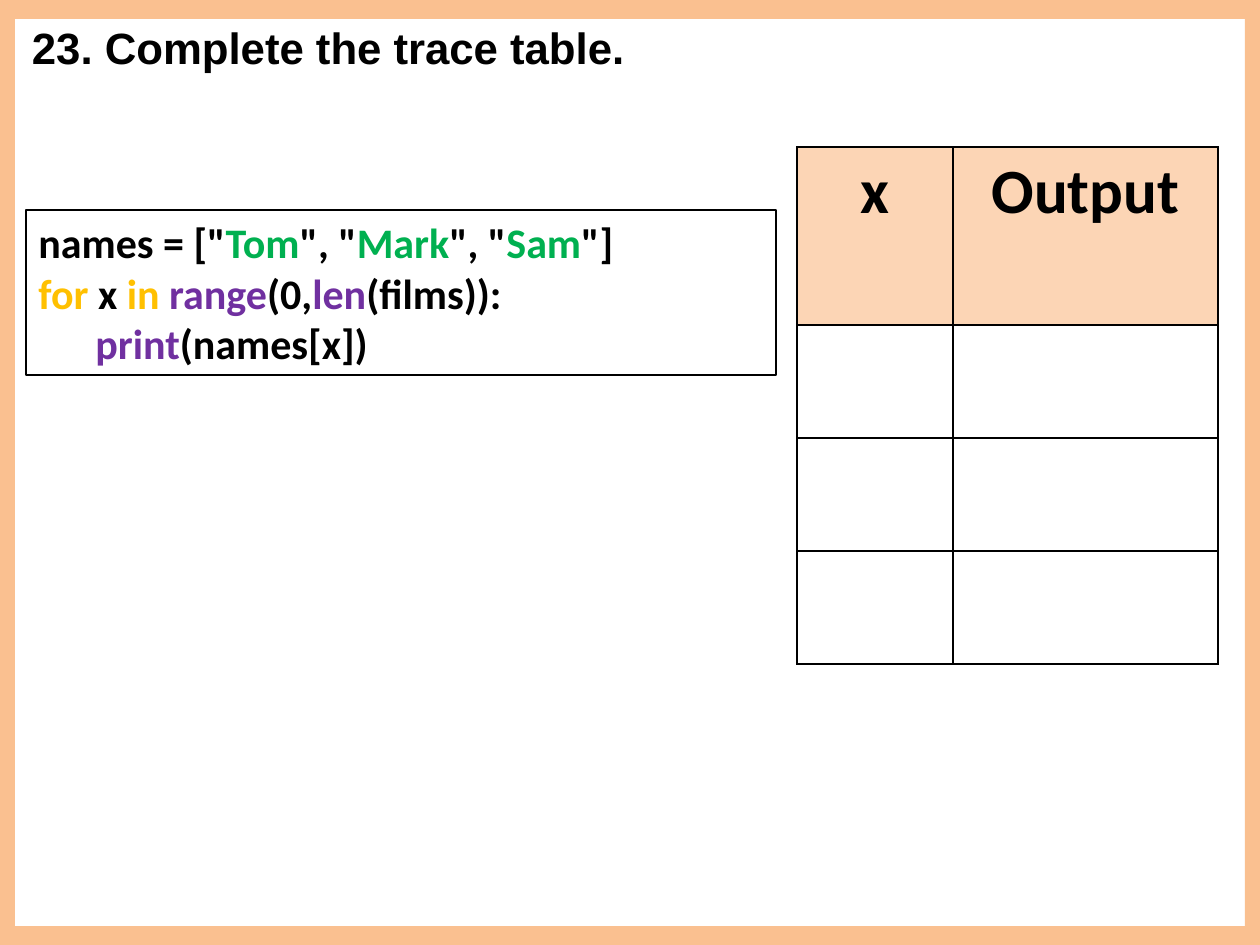
import pptx
import pptx.util
import pptx.dml.color
import pptx.enum.shapes
import pptx.enum.text
import lxml.etree

SCALE = 914400 // 126
NS = "http://schemas.openxmlformats.org/drawingml/2006/main"
SHAPE = pptx.enum.shapes.MSO_SHAPE
ALIGN = pptx.enum.text.PP_ALIGN

BLACK, WHITE = "000000", "FFFFFF"
PEACH, PALE = "FAC090", "FCD5B5"
GREEN, GOLD, PURPLE = "00B050", "FFC000", "7030A0"


def px(n):
    return pptx.util.Emu(n * SCALE)


def rgb(code):
    return pptx.dml.color.RGBColor.from_string(code)


class Page:
    def __init__(self, deck):
        self.slide = deck.slides.add_slide(deck.slide_layouts[6])
        self.shapes = self.slide.shapes

    def style(self, para, size, font="Calibri"):
        para.font.name = font
        para.font.size = pptx.util.Pt(size)
        para.font.bold = True

    def words(self, para, runs):
        for text, color in runs:
            run = para.add_run()
            run.text = text
            run.font.color.rgb = rgb(color)

    def box(self, x, y, w, h, fill=None, line=None, kind=SHAPE.RECTANGLE):
        shape = self.shapes.add_shape(kind, px(x), px(y), px(w), px(h))
        shape.shadow.inherit = False
        if fill:
            shape.fill.solid()
            shape.fill.fore_color.rgb = rgb(fill)
        else:
            shape.fill.background()
        if line:
            shape.line.color.rgb = rgb(line)
            shape.line.width = pptx.util.Pt(1.5)
        else:
            shape.line.fill.background()
        return shape

    def title(self, x, y, w, h, text):
        frame = self.shapes.add_textbox(px(x), px(y), px(w), px(h)).text_frame
        frame.word_wrap = True
        frame.margin_left = frame.margin_top = 0
        para = frame.paragraphs[0]
        para.space_after = pptx.util.Pt(14)
        self.style(para, 25, "Arial")
        self.words(para, [(text, BLACK)])

    def code(self, x, y, w, h, lines):
        frame = self.box(x, y, w, h, line=BLACK).text_frame
        frame.word_wrap = True
        for i, (indent, runs) in enumerate(lines):
            para = frame.add_paragraph() if i else frame.paragraphs[0]
            para.alignment = ALIGN.LEFT
            para._p.get_or_add_pPr().set("marL", str(px(indent)))
            self.style(para, 24)
            self.words(para, runs)

    def border(self, cell):
        props = cell._tc.get_or_add_tcPr()
        for side in "LRTB":
            line = lxml.etree.SubElement(props, f"{{{NS}}}ln{side}", w="12700")
            fill = lxml.etree.SubElement(line, f"{{{NS}}}solidFill")
            lxml.etree.SubElement(fill, f"{{{NS}}}srgbClr", val=BLACK)

    def table(self, x, y, cols, rows, heads):
        grid = self.shapes.add_table(len(rows), len(cols), px(x), px(y),
                                     px(sum(cols)), px(sum(rows))).table
        for col, w in zip(grid.columns, cols):
            col.width = px(w)
        for row, h in zip(grid.rows, rows):
            row.height = px(h)
        for cell in grid.iter_cells():
            self.border(cell)
            cell.fill.solid()
            cell.fill.fore_color.rgb = rgb(WHITE)
        for i, head in enumerate(heads):
            cell = grid.cell(0, i)
            cell.fill.fore_color.rgb = rgb(PALE)
            para = cell.text_frame.paragraphs[0]
            para.alignment = ALIGN.CENTER
            self.style(para, 36)
            self.words(para, [(head, BLACK)])


def main():
    deck = pptx.Presentation()
    deck.slide_width, deck.slide_height = px(1260), px(945)
    page = Page(deck)

    # Frame around the slide
    for y in (0, 926):
        page.box(0, y, 1260, 19, PEACH, kind=SHAPE.FLOWCHART_PROCESS)
    for x in (0, 1245):
        page.box(x, 19, 15, 907, PEACH)

    # Question
    page.title(32, 21, 1218, 903, "23. Complete the trace table.")

    # Trace table
    page.table(797, 147, [156, 265], [178] + [113] * 3, ["x", "Output"])

    # Program to trace
    page.code(26, 210, 750, 165, [
        (0, [('names = ["', BLACK), ("Tom", GREEN), ('", "', BLACK),
             ("Mark", GREEN), ('", "', BLACK), ("Sam", GREEN), ('"]', BLACK)]),
        (0, [("for", GOLD), (" x ", BLACK), ("in ", GOLD), ("range", PURPLE),
             ("(0,", BLACK), ("len", PURPLE), ("(films)):", BLACK)]),
        (57, [("print", PURPLE), ("(names[x])", BLACK)]),
    ])

    deck.save("out.pptx")


if __name__ == "__main__":
    main()
